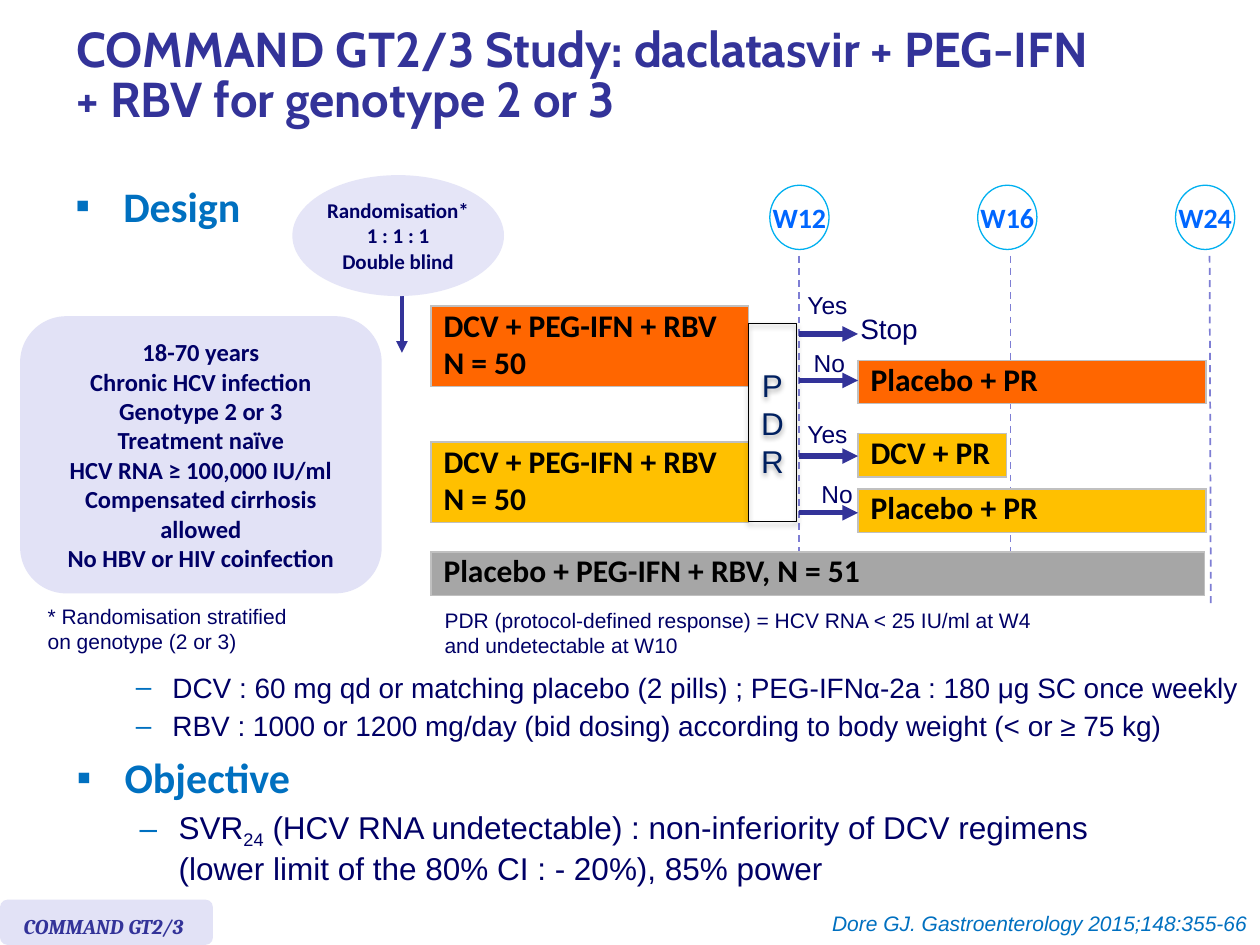
from dataclasses import dataclass

from lxml.etree import SubElement
from pptx import Presentation
from pptx.dml.color import RGBColor as RGB
from pptx.enum.dml import MSO_LINE as Dash
from pptx.enum.shapes import MSO_CONNECTOR as Link, MSO_SHAPE as Shape
from pptx.enum.text import MSO_ANCHOR as Anchor, PP_ALIGN as Align
from pptx.oxml import parse_xml
from pptx.oxml.ns import nsdecls, qn
from pptx.util import Inches, Pt


@dataclass(frozen=True)
class Theme:
    indigo: str = "333399"
    navy: str = "000066"
    ink: str = "002060"
    blue: str = "0070C0"
    week: str = "0066FF"
    ring: str = "00B0F0"
    dash: str = "7E7ED4"
    lilac: str = "E2E2F6"
    pale: str = "E5E5F7"
    orange: str = "FF6600"
    amber: str = "FFC000"
    grey: str = "A6A6A6"
    border: str = "C0C0C0"
    black: str = "000000"
    white: str = "FFFFFF"
    title: int = 28
    heading: int = 24
    body: int = 18
    label: int = 16
    small: int = 14
    note: int = 12


def assign(target, values):
    for name, value in values.items():
        setattr(target, name, value)


def face(size, color, name="Arial", **flags):
    return {"size": Pt(size), "name": name, "color": color, **flags}


class StudySlide:
    def __init__(self, slide, theme):
        self.shapes = slide.shapes
        self.theme = theme

    def span(self, para, text, style, baseline=0):
        for number, part in enumerate(text.split("\n")):
            if number:
                para.add_line_break()
            span = para.add_run()
            span.text = part
            assign(span.font, {key: value for key, value in style.items() if key != "color"})
            span.font.color.rgb = RGB.from_string(style["color"])
            if baseline:
                span.font._element.set("baseline", str(baseline))

    def paragraphs(self, frame, lines, style, **layout):
        for number, line in enumerate(lines):
            para = frame.paragraphs[0] if number == 0 else frame.add_paragraph()
            self.span(para, line, style)
            assign(para, layout)
            if number == 0:
                para.space_before = Pt(0)

    def text(self, place, lines, style, wrap=True, anchor=Anchor.TOP, **layout):
        frame = self.shapes.add_textbox(*map(Inches, place)).text_frame
        assign(frame, {"word_wrap": wrap, "vertical_anchor": anchor})
        self.paragraphs(frame, lines, style, **layout)
        return frame

    def bullet(self, para, mark, margin, hang):
        props = para._p.get_or_add_pPr()
        props.set("marL", str(Inches(margin)))
        props.set("indent", str(-Inches(hang)))
        color = SubElement(props, qn("a:buClr"))
        SubElement(color, qn("a:srgbClr"), val=self.theme.blue)
        SubElement(props, qn("a:buFont"), typeface="Arial")
        SubElement(props, qn("a:buChar"), char=mark)

    def bullets(self, place, items):
        frame = self.text(place, [], {})
        for number, (mark, margin, hang, spans, style, layout) in enumerate(items):
            para = frame.paragraphs[0] if number == 0 else frame.add_paragraph()
            self.bullet(para, mark, margin, hang)
            assign(para, layout)
            for text, baseline in spans:
                self.span(para, text, style, baseline)

    def shape(self, kind, place, lines=(), style=None, fill=None, line=None, wrap=True):
        box = self.shapes.add_shape(kind, *map(Inches, place))
        box.shadow.inherit = False
        if fill:
            box.fill.solid()
            box.fill.fore_color.rgb = RGB.from_string(fill)
        else:
            box.fill.background()
        if line:
            box.line.color.rgb = RGB.from_string(line)
            box.line.width = Pt(0.75)
        else:
            box.line.fill.background()
        assign(box.text_frame, {"word_wrap": wrap, "vertical_anchor": Anchor.MIDDLE})
        self.paragraphs(box.text_frame, lines, style, alignment=Align.CENTER)
        return box

    def cast_shadow(self, box):
        effects = box._element.spPr.find(qn("a:effectLst"))
        effects.append(parse_xml(
            f'<a:outerShdw {nsdecls("a")} blurRad="{Pt(3.1)}" dist="{Pt(1.8)}" dir="5400000" '
            f'rotWithShape="0"><a:srgbClr val="{self.theme.black}"><a:alpha val="35000"/>'
            '</a:srgbClr></a:outerShdw>'))

    def line(self, start, end, color, width, arrow=False):
        link = self.shapes.add_connector(Link.STRAIGHT, *map(Inches, start + end))
        link.line.color.rgb = RGB.from_string(color)
        link.line.width = Pt(width)
        if arrow:
            SubElement(link._element.spPr.find(qn("a:ln")), qn("a:tailEnd"), type="triangle")
        else:
            link.line.dash_style = Dash.DASH
        SubElement(link._element.spPr, qn("a:effectLst"))

    def bar(self, place, lines, fill):
        table = self.shapes.add_table(1, 1, *map(Inches, place)).table
        assign(table, {"first_row": False, "horz_banding": False})
        cell = table.cell(0, 0)
        cell.vertical_anchor = Anchor.MIDDLE
        cell.fill.solid()
        cell.fill.fore_color.rgb = RGB.from_string(fill)
        self.paragraphs(cell.text_frame, lines,
                        face(self.theme.body, self.theme.black, "Calibri", bold=True),
                        line_spacing=0.8, space_before=Pt(3.6))
        props = cell._tc.get_or_add_tcPr()
        for number, side in enumerate(("lnL", "lnR", "lnT", "lnB")):
            props.insert(number, parse_xml(
                f'<a:{side} {nsdecls("a")} w="{Pt(1)}"><a:solidFill>'
                f'<a:srgbClr val="{self.theme.border}"/></a:solidFill></a:{side}>'))


def build_schema(page, theme):
    for top, bottom in (((9.6, 2.03), (9.61, 4.82)), ((6.34, 2.03), (6.34, 4.69)),
                        ((8.02, 2.03), (8.02, 4.69))):
        page.line(top, bottom, theme.dash, 1)
    week_style = face(theme.label, theme.week, "Calibri", bold=True)
    for left, week in ((6.11, "W12"), (7.76, "W16"), (9.33, "W24")):
        page.shape(Shape.OVAL, (left, 1.47, 0.47, 0.51), [week], week_style,
                   theme.white, theme.ring, wrap=False)

    arm = ["DCV + PEG-IFN + RBV", "N = 50"]
    for left, top, width, height, lines, fill in (
            (3.42, 2.43, 2.52, 0.63, arm, theme.orange),
            (3.42, 3.51, 2.52, 0.63, arm, theme.amber),
            (6.81, 2.86, 2.76, 0.34, ["Placebo + PR"], theme.orange),
            (6.81, 3.44, 1.18, 0.34, ["DCV + PR"], theme.amber),
            (6.81, 3.88, 2.76, 0.34, ["Placebo + PR"], theme.amber),
            (3.42, 4.38, 6.14, 0.34, ["Placebo + PEG-IFN + RBV, N = 51"], theme.grey)):
        page.bar((left, top, width, height), lines, fill)

    answer_style = face(theme.small, theme.navy)
    for arrow_top, left, top, width, answer in (
            (2.65, 6.31, 2.25, 0.52, "Yes"), (3.02, 6.36, 2.71, 0.45, "No"),
            (3.62, 6.31, 3.28, 0.52, "Yes"), (4.07, 6.42, 3.75, 0.45, "No")):
        page.line((6.34, arrow_top), (6.81, arrow_top), theme.indigo, 3, arrow=True)
        page.text((left, top, width, 0.34), [answer], answer_style, wrap=False)
    page.text((6.73, 2.42, 0.66, 0.37), ["Stop"], face(theme.label, theme.navy), wrap=False)

    page.line((3.19, 2.33), (3.19, 2.8), theme.indigo, 2.25, arrow=True)
    page.shape(Shape.OVAL, (2.32, 1.39, 1.68, 0.96), ["Randomisation*", "1 : 1 : 1", "Double blind"],
               face(theme.note, theme.navy, "Calibri", bold=True), theme.pale, wrap=False)
    page.shape(Shape.ROUNDED_RECTANGLE, (0.16, 2.51, 2.87, 2.2),
               ["18-70 years", "Chronic HCV infection", "Genotype 2 or 3", "Treatment naïve",
                "HCV RNA ≥ 100,000 IU/ml", "Compensated cirrhosis allowed",
                "No HBV or HIV coinfection"],
               face(theme.small, theme.navy, "Calibri", bold=True), theme.lilac)
    response = page.shape(Shape.RECTANGLE, (5.94, 2.57, 0.38, 1.57), "PDR",
                          face(theme.body, theme.ink), line=theme.black)
    page.cast_shadow(response)


def build_text(page, theme):
    page.text((0.51, 0.08, 9.49, 1.07),
              ["COMMAND GT2/3 Study: daclatasvir + PEG-IFN\n+ RBV for genotype 2 or 3"],
              face(theme.title, theme.indigo, "Cabin", bold=True),
              anchor=Anchor.MIDDLE, line_spacing=0.85)
    note = face(theme.note, theme.navy)
    page.text((0.28, 4.74, 2.16, 0.5), ["* Randomisation stratified", "on genotype (2 or 3)"],
              note, wrap=False)
    page.text((3.43, 4.77, 6.22, 0.5),
              ["PDR (protocol-defined response) = HCV RNA < 25 IU/ml at W4\nand undetectable at W10"], note)

    heading = face(theme.heading, theme.blue, "Calibri", bold=True)
    page.bullets((0.5, 1.38, 1.98, 0.63), [("▪", 0.38, 0.38, [("Design", 0)], heading, {})])
    dosing = {"line_spacing": Pt(15.8), "space_after": Pt(6)}
    page.bullets((0.59, 5.32, 9.41, 0.63), [
        ("–", 0.68, 0.29, [(line, 0)], face(theme.label, theme.navy), dosing) for line in (
            "DCV : 60 mg qd or matching placebo (2 pills) ; PEG-IFNα-2a : 180 μg SC once weekly",
            "RBV : 1000 or 1200 mg/day (bid dosing) according to body weight (< or ≥ 75 kg)")])
    endpoint = [("SVR", 0), ("24", -25000),
                (" (HCV RNA undetectable) : non-inferiority of DCV regimens\n"
                 "(lower limit of the 80% CI : - 20%), 85% power", 0)]
    page.bullets((0.51, 6.03, 9.49, 1.08), [
        ("▪", 0.38, 0.38, [("Objective", 0)], heading, {"line_spacing": Pt(20.8)}),
        ("–", 0.81, 0.31, endpoint, face(theme.body, theme.navy),
         {"line_spacing": Pt(20.8), "space_before": Pt(6.7), "space_after": Pt(6)})])

    page.shape(Shape.ROUNDED_RECTANGLE, (0, 7.14, 1.69, 0.36), fill=theme.lilac)
    page.text((0.09, 7.2, 1.53, 0.3), ["COMMAND GT2/3"],
              face(theme.note, theme.indigo, "Cambria", bold=True, italic=True))
    page.text((6.02, 7.18, 3.98, 0.3), ["Dore GJ. Gastroenterology 2015;148:355-66"],
              face(theme.note, theme.blue, italic=True), alignment=Align.RIGHT)


def main():
    deck = Presentation()
    assign(deck, {"slide_width": Inches(10), "slide_height": Inches(7.5)})
    theme = Theme()
    page = StudySlide(deck.slides.add_slide(deck.slide_layouts[6]), theme)
    build_schema(page, theme)
    build_text(page, theme)
    deck.save("out.pptx")


if __name__ == "__main__":
    main()
